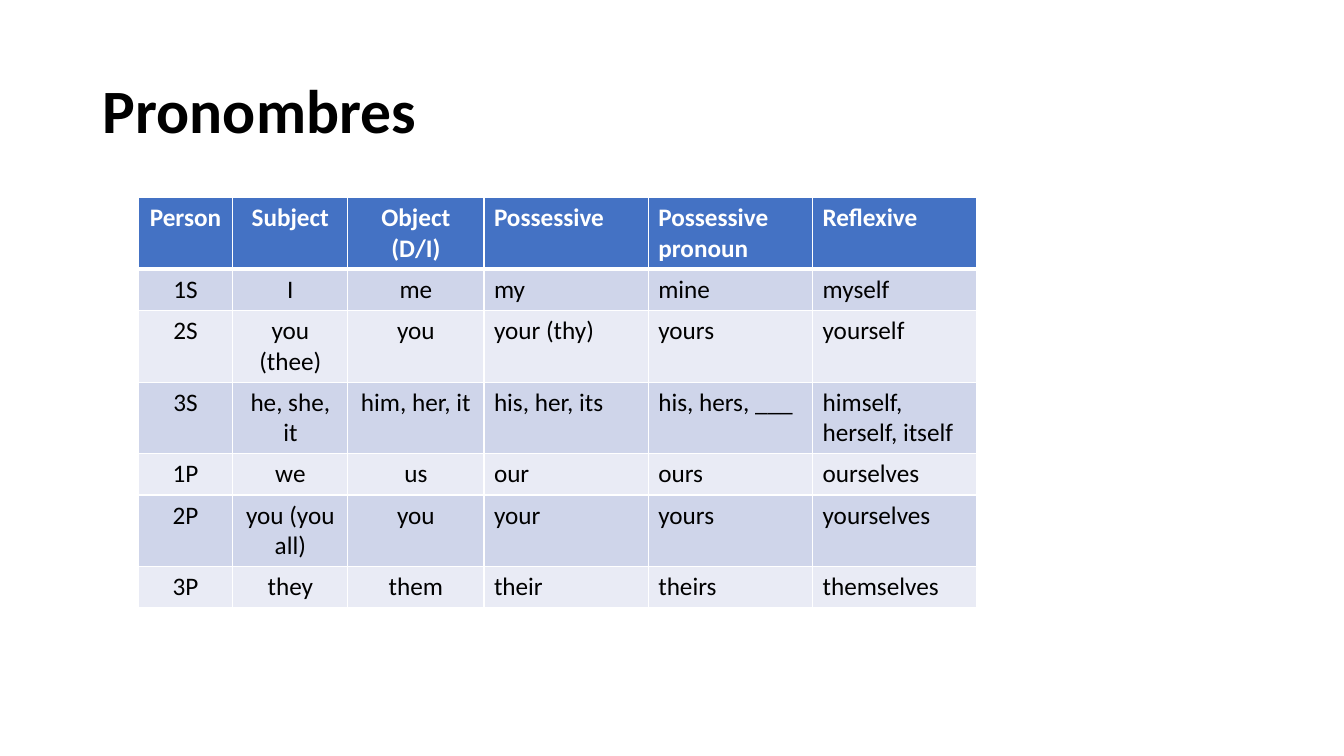
from lxml import etree
from pptx import Presentation
from pptx.dml.color import RGBColor
from pptx.enum.text import MSO_ANCHOR, PP_ALIGN
from pptx.oxml.ns import qn
from pptx.util import Inches, Pt

COL_WIDTHS = [0.94, 1.14, 1.35, 1.63, 1.63, 1.63]
ROW_HEIGHT = 0.41
CENTRED_COLS = 3
PRONOUNS = [
    ["Person", "Subject", "Object (D/I)", "Possessive", "Possessive pronoun", "Reflexive"],
    ["1S", "I", "me", "my", "mine", "myself"],
    ["2S", "you (thee)", "you", "your (thy)", "yours", "yourself"],
    ["3S", "he, she, it", "him, her, it", "his, her, its", "his, hers, ___",
     "himself, herself, itself"],
    ["1P", "we", "us", "our", "ours", "ourselves"],
    ["2P", "you (you all)", "you", "your", "yours", "yourselves"],
    ["3P", "they", "them", "their", "theirs", "themselves"],
]


def rgb(value):
    return RGBColor.from_string(value)


def write(tf, text, size=18, color="000000", bold=False, align=PP_ALIGN.LEFT, spacing=None):
    p = tf.paragraphs[0]
    p.alignment = align
    if spacing:
        p.line_spacing = spacing
    r = p.add_run()
    r.text = text
    r.font.name = "Calibri"
    r.font.size = Pt(size)
    r.font.bold = bold
    r.font.color.rgb = rgb(color)


def set_borders(cell, color, **widths):
    """Draw the cell's edges; widths are points by edge: L, R, T, B."""
    tcPr = cell._tc.get_or_add_tcPr()
    for edge, width in widths.items():
        ln = etree.SubElement(tcPr, qn(f"a:ln{edge}"), w=str(Pt(width)))
        fill = etree.SubElement(ln, qn("a:solidFill"))
        etree.SubElement(fill, qn("a:srgbClr"), val=color)


class SlideBuilder:
    header_fill = "4472C4"
    band_fills = ["E9EBF5", "CFD5EA"]
    white = "FFFFFF"

    def __init__(self, prs):
        self.s = prs.slides.add_slide(prs.slide_layouts[5])

    def title(self, text, x, y, w, h):
        sp = self.s.shapes.title
        sp.left, sp.top, sp.width, sp.height = map(Inches, (x, y, w, h))
        tf = sp.text_frame
        tf.vertical_anchor = MSO_ANCHOR.MIDDLE
        write(tf, text, size=44, bold=True, spacing=0.9)

    def table(self, rows, x, y):
        frame = self.s.shapes.add_table(
            len(rows), len(COL_WIDTHS), Inches(x), Inches(y),
            Inches(sum(COL_WIDTHS)), Inches(ROW_HEIGHT * len(rows)))
        table = frame.table
        for col, width in zip(table.columns, COL_WIDTHS):
            col.width = Inches(width)
        for i, row in enumerate(rows):
            table.rows[i].height = Inches(ROW_HEIGHT)
            for j, text in enumerate(row):
                self.cell(table.cell(i, j), text, i, j)

    def cell(self, cell, text, i, j):
        header = i == 0
        set_borders(cell, self.white, L=1, R=1, T=3 if i == 1 else 1, B=3 if header else 1)
        cell.fill.solid()
        cell.fill.fore_color.rgb = rgb(self.header_fill if header else self.band_fills[i % 2])
        write(cell.text_frame, text, bold=header,
              color=self.white if header else "000000",
              align=PP_ALIGN.CENTER if j < CENTRED_COLS else PP_ALIGN.LEFT)


def main():
    prs = Presentation()
    prs.slide_width, prs.slide_height = Inches(13.33), Inches(7.5)
    slide = SlideBuilder(prs)
    slide.title("Pronombres", 0.92, 0.4, 11.5, 1.45)
    slide.table(PRONOUNS, 1.37, 1.96)
    prs.save("out.pptx")


if __name__ == "__main__":
    main()
